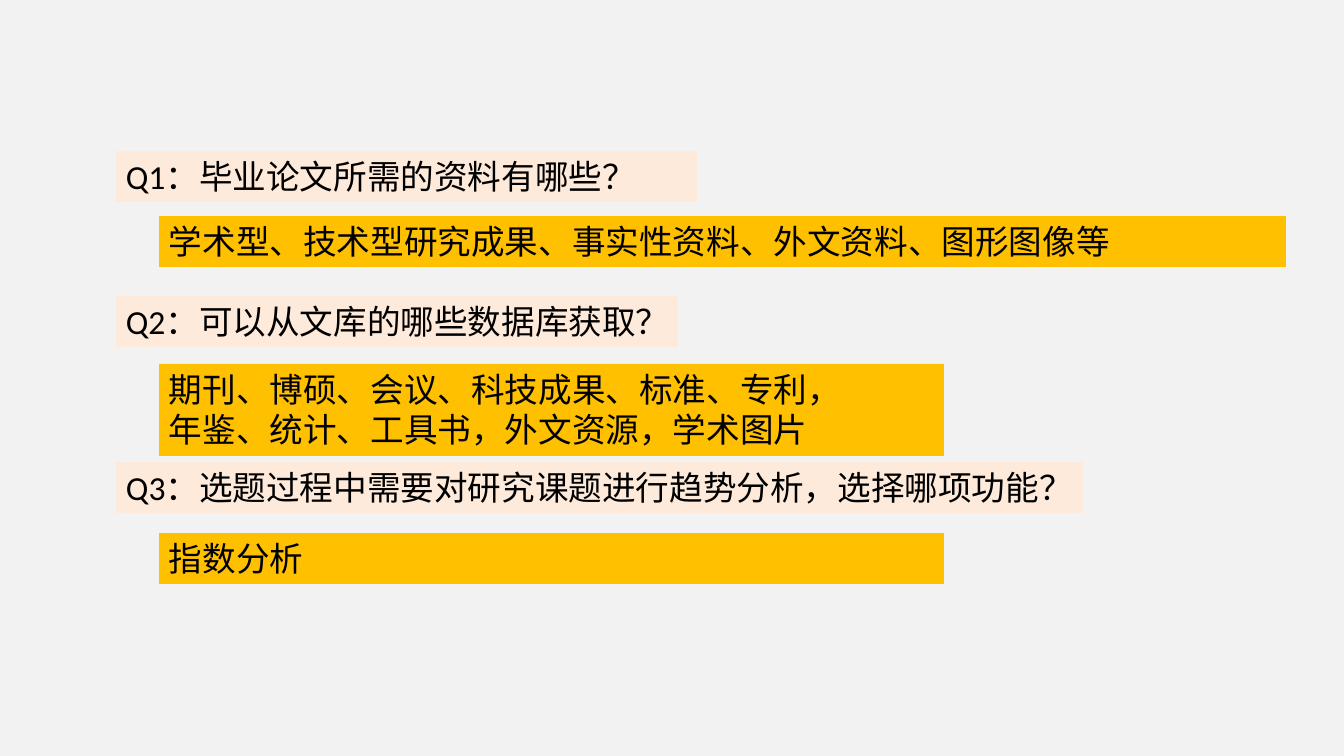
from pptx import Presentation
from pptx import util as u
from pptx.dml.color import RGBColor
from pptx.enum import text

PX = 12192000 / 1344
PEACH, GOLD, BLACK, GREY = "FDEADA", "FFC000", "000000", "F2F2F2"
ASK_X, REPLY_X = 116, 159
ROW, TALL = 51, 92


def px(n):
    return u.Emu(round(n * PX))


def paint(fill, tone):
    fill.solid()
    fill.fore_color.rgb = RGBColor.from_string(tone)


def write(frame, words, font="Calibri", size=24, tone=BLACK, wrap=True):
    """Fill a text frame, one paragraph for each line of words."""
    frame.word_wrap = wrap
    frame.auto_size = text.MSO_AUTO_SIZE.SHAPE_TO_FIT_TEXT
    for i, line in enumerate(words.split("\n")):
        para = frame.add_paragraph() if i else frame.paragraphs[0]
        run = para.add_run()
        run.text = line
        run.font.name = font
        run.font.size = u.Pt(size)
        run.font.color.rgb = RGBColor.from_string(tone)


class Deck:
    def __init__(self):
        self.show = Presentation()
        self.show.slide_width = px(1344)
        self.show.slide_height = px(756)
        self.slide = self.show.slides.add_slide(self.show.slide_layouts[6])
        paint(self.slide.background.fill, GREY)

    def band(self, x, y, w, h, tone, words, **style):
        box = self.slide.shapes.add_textbox(px(x), px(y), px(w), px(h))
        paint(box.fill, tone)
        write(box.text_frame, words, **style)

    def ask(self, y, w, words, wrap=False):
        self.band(ASK_X, y, w, ROW, PEACH, words, wrap=wrap)

    def reply(self, y, w, words, h=ROW):
        self.band(REPLY_X, y, w, h, GOLD, words)


def main():
    deck = Deck()
    deck.ask(151, 581, "Q1：毕业论文所需的资料有哪些？", wrap=True)
    deck.reply(216, 1127, "学术型、技术型研究成果、事实性资料、外文资料、图形图像等")
    deck.ask(296, 562, "Q2：可以从文库的哪些数据库获取？")
    deck.reply(364, 785, "期刊、博硕、会议、科技成果、标准、专利，\n"
               "年鉴、统计、工具书，外文资源，学术图片", h=TALL)
    deck.ask(462, 967, "Q3：选题过程中需要对研究课题进行趋势分析，选择哪项功能？")
    deck.reply(533, 785, "指数分析")
    deck.show.save("out.pptx")


if __name__ == "__main__":
    main()
